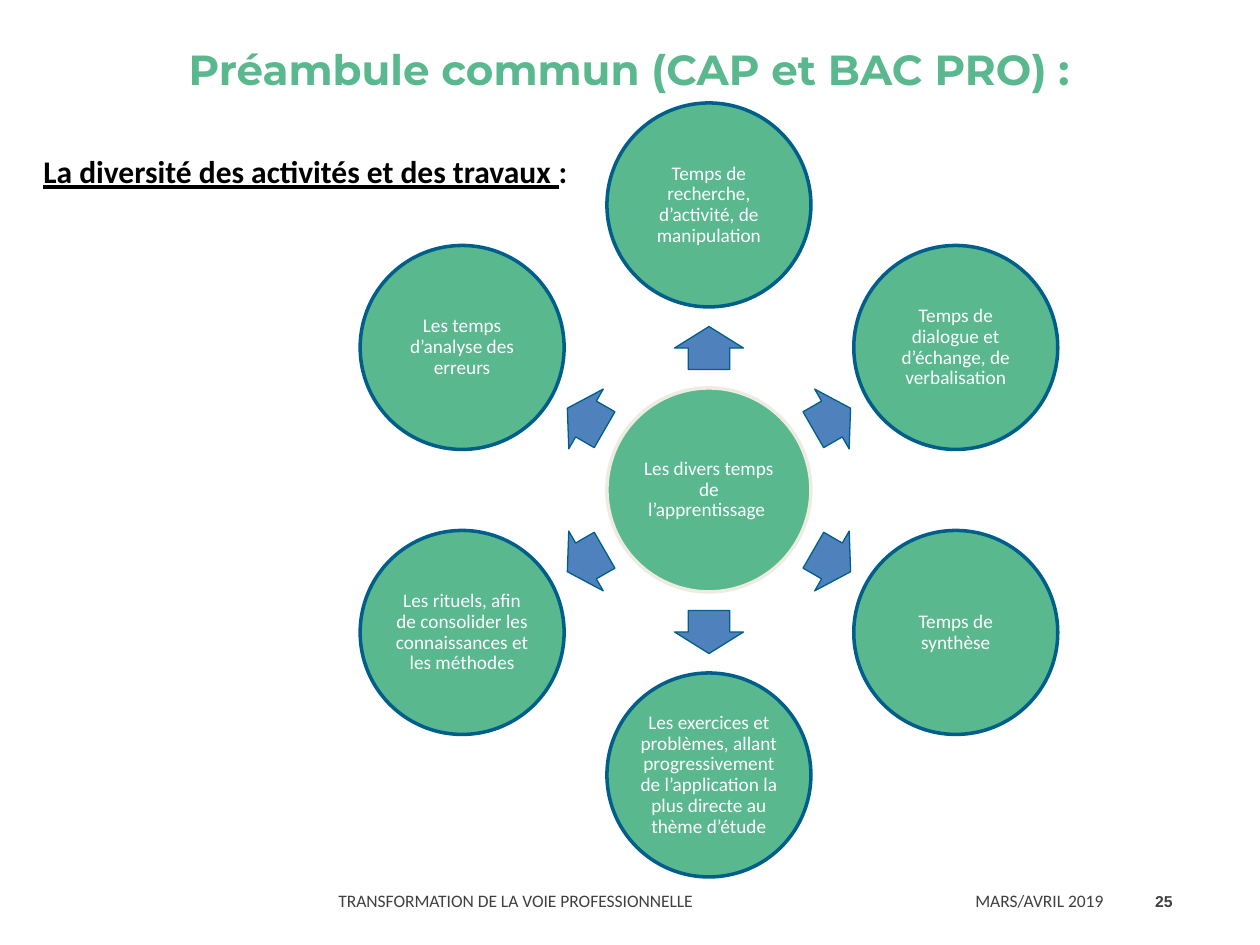
from math import cos, sin, radians
from pptx import Presentation
from pptx.dml.color import RGBColor
from pptx.enum.shapes import MSO_SHAPE as SHAPE
from pptx.enum.text import MSO_ANCHOR as ANCHOR, PP_ALIGN as ALIGN
from pptx.util import Pt

PX = 914400 // 126
GREEN, BLUE, NAVY, CREAM = "5AB88F", "4F81BD", "005E8B", "EEECE1"
WHITE, BLACK, GREY = "FFFFFF", "000000", "404040"

TITLE = "Préambule commun (CAP et BAC PRO) :"
SUBTITLE = [("La diversité des activités et des travaux ", True), (":", False)]
HUB = "Les divers temps de l’apprentissage "
SPOKES = [
    "Temps de recherche, d’activité, de manipulation",
    "Temps de dialogue et d’échange, de verbalisation",
    "Temps de synthèse",
    "Les exercices et problèmes, allant progressivement de l’application la plus directe au thème d’étude",
    "Les rituels, afin de consolider les connaissances et les méthodes",
    "Les temps d’analyse des erreurs",
]
FOOTERS = [
    ("TRANSFORMATION DE LA VOIE PROFESSIONNELLE", (326, 874, 636, 53), "Calibri", 10, False, ALIGN.LEFT),
    ("MARS/AVRIL 2019", (963, 876, 160, 50), "Calibri", 10, False, ALIGN.LEFT),
    ("25", (1123, 876, 62, 50), "Arial", 9, True, ALIGN.RIGHT),
]
CENTER_X, CENTER_Y = 709, 490
DIAMETER, RING, ARROW_RING = 204, 285, 142
ARROW_W, ARROW_H = 43, 69


def px(n):
    return round(n * PX)


def rgb(color):
    return RGBColor.from_string(color)


def place(sp, x, y, w, h):
    sp.left, sp.top, sp.width, sp.height = map(px, (x, y, w, h))


def add_run(p, text, font, size, color, bold=False, underline=None):
    r = p.add_run()
    r.text = text
    f = r.font
    f.name, f.size, f.bold, f.underline = font, Pt(size), bold, underline
    f.color.rgb = rgb(color)


def add_text(slide, box, anchor):
    tf = slide.shapes.add_textbox(*map(px, box)).text_frame
    tf.word_wrap = True
    tf.vertical_anchor = anchor
    return tf.paragraphs[0]


def add_centered(slide, kind, cx, cy, w, h, fill, line, weight):
    box = map(px, (cx - w / 2, cy - h / 2, w, h))
    sp = slide.shapes.add_shape(kind, *box)
    sp.shadow.inherit = False
    sp.fill.solid()
    sp.fill.fore_color.rgb = rgb(fill)
    sp.line.color.rgb = rgb(line)
    sp.line.width = Pt(weight)
    return sp


def add_circle(slide, text, cx, cy, line):
    sp = add_centered(slide, SHAPE.OVAL, cx, cy, DIAMETER, DIAMETER, GREEN, line, 2)
    tf = sp.text_frame
    tf.word_wrap = True
    tf.vertical_anchor = ANCHOR.MIDDLE
    tf.margin_left = tf.margin_right = tf.margin_top = tf.margin_bottom = px(2)
    p = tf.paragraphs[0]
    p.alignment = ALIGN.CENTER
    p.line_spacing = 0.9
    add_run(p, text, "Calibri", 11, WHITE)


def add_arrow(slide, cx, cy, angle):
    sp = add_centered(slide, SHAPE.RIGHT_ARROW, cx, cy, ARROW_W, ARROW_H, BLUE, NAVY, 0.75)
    sp.adjustments[0], sp.adjustments[1] = 0.6, 0.5
    sp.rotation = angle % 360


def polar(radius, angle):
    a = radians(angle)
    return CENTER_X + radius * cos(a), CENTER_Y + radius * sin(a)


def main():
    prs = Presentation()
    prs.slide_width, prs.slide_height = px(1260), px(945)
    slide = prs.slides.add_slide(prs.slide_layouts[5])

    title = slide.shapes.title
    place(title, 30, 19, 1198, 100)
    title.text_frame.vertical_anchor = ANCHOR.MIDDLE
    p = title.text_frame.paragraphs[0]
    p.alignment = ALIGN.CENTER
    add_run(p, TITLE, "Montserrat", 24, GREEN, True)

    for text, box, font, size, bold, align in FOOTERS:
        p = add_text(slide, box, ANCHOR.MIDDLE)
        p.alignment = align
        add_run(p, text, font, size, GREY, bold)

    p = add_text(slide, (31, 146, 1197, 50), ANCHOR.TOP)
    for text, underline in SUBTITLE:
        add_run(p, text, "Calibri", 18, BLACK, True, underline)

    add_circle(slide, HUB, CENTER_X, CENTER_Y, CREAM)
    for i, text in enumerate(SPOKES):
        angle = i * 360 / len(SPOKES) - 90
        add_arrow(slide, *polar(ARROW_RING, angle), angle)
        add_circle(slide, text, *polar(RING, angle), NAVY)

    prs.save("out.pptx")


if __name__ == "__main__":
    main()
